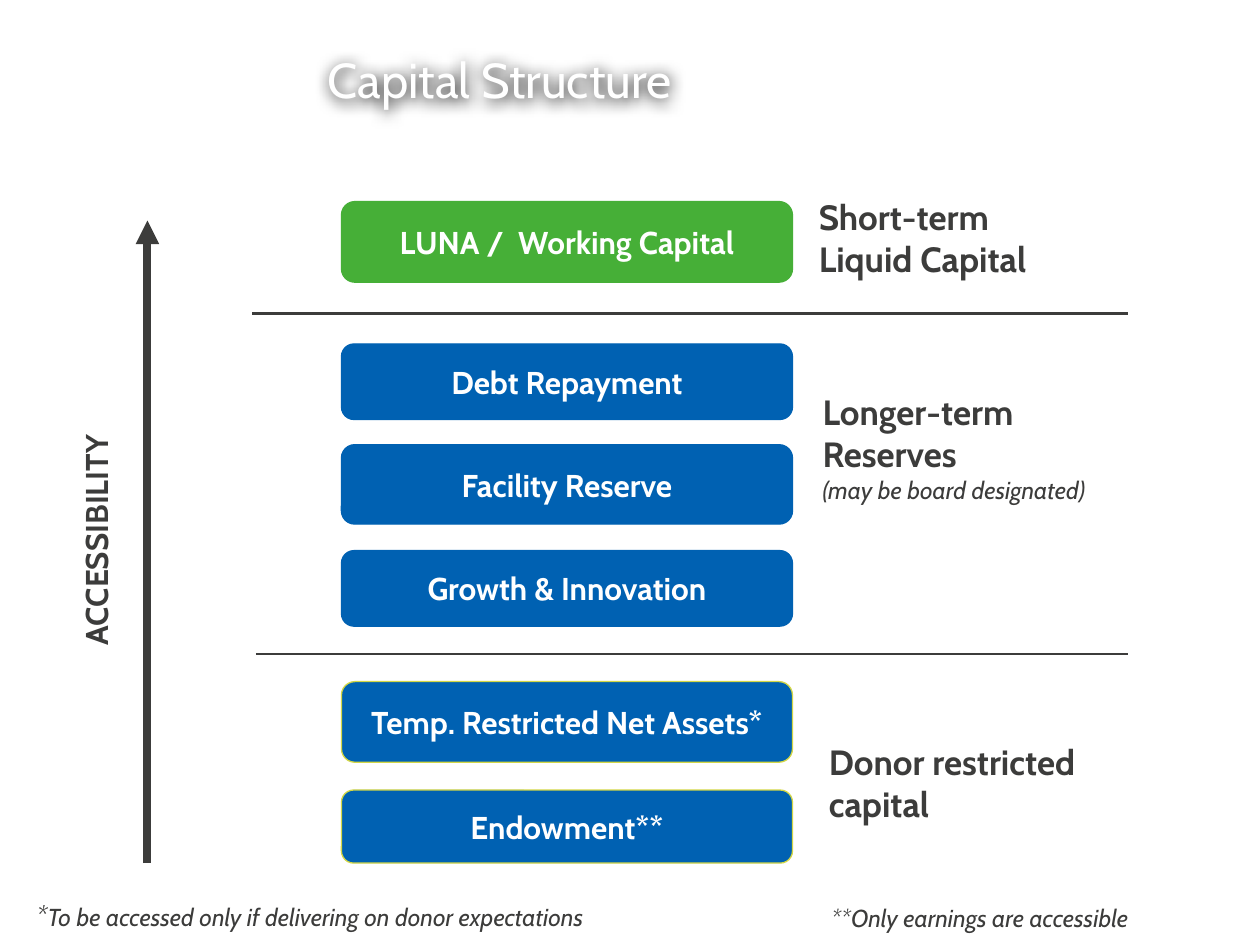
from lxml import etree
from pptx import Presentation
from pptx import util as u
from pptx.dml.color import RGBColor
from pptx.enum import shapes, text
from pptx.oxml.ns import qn

COLS, ROWS = 40, 30
FONT = "Cabin"
C = {"blue": "0061B2", "green": "46AF37", "lime": "D3D745",
     "ink": "3C3C3B", "white": "FFFFFF", "black": "000000"}

prs = Presentation()
prs.slide_width, prs.slide_height = u.Inches(10), u.Inches(7.5)


def col(n):
    return round(prs.slide_width * n / COLS)


def row(n):
    return round(prs.slide_height * n / ROWS)


def rgb(name):
    return RGBColor.from_string(C[name])


def place(box, x, y, w, h):
    return col(box[0] + x), row(box[1] + y), col(w), row(h)


def write(tf, lines, size=18, color="ink", bold=False, italic=False,
          align=text.PP_ALIGN.LEFT, anchor=text.MSO_ANCHOR.TOP, wrap=True):
    tf.word_wrap, tf.vertical_anchor = wrap, anchor
    for i, line in enumerate(lines):
        p = tf.paragraphs[0] if i == 0 else tf.add_paragraph()
        p.alignment = align
        for words, changes in line:
            r = p.add_run()
            r.text = words
            f = r.font
            f.name, f.color.rgb = FONT, rgb(color)
            f.size = u.Pt(changes.get("size", size))
            f.bold = changes.get("bold", bold)
            f.italic = changes.get("italic", italic)


def textbox(s, area, lines, **fmt):
    sp = s.shapes.add_textbox(*area)
    write(sp.text_frame, lines, **fmt)
    return sp


def rule(s, x1, y1, x2, y2, width):
    ln = s.shapes.add_connector(shapes.MSO_CONNECTOR.STRAIGHT,
                                col(x1), row(y1), col(x2), row(y2))
    ln.line.color.rgb, ln.line.width = rgb("ink"), u.Pt(width)
    etree.SubElement(ln._element.spPr, qn("a:effectLst"))
    return ln


def title(s, box):
    sp = textbox(s, place(box, 0, 0, *box[2:]), [[("Capital Structure", {})]],
                 size=28, color="white", anchor=text.MSO_ANCHOR.MIDDLE)
    effects = etree.SubElement(sp._element.spPr, qn("a:effectLst"))
    glow = etree.SubElement(effects, qn("a:outerShdw"), blurRad=str(u.Pt(8.5)),
                            dist=str(u.Pt(1)), dir="5400000", algn="tl", rotWithShape="0")
    etree.SubElement(glow, qn("a:srgbClr"), val=C["black"])


def capital_stack(s, box):
    bars = [("LUNA /  Working Capital", 0, 2.56, "green", "green"),
            ("Debt Repayment", 4.52, 2.4, "blue", "blue"),
            ("Facility Reserve", 7.72, 2.52, "blue", "blue"),
            ("Growth & Innovation", 11.08, 2.4, "blue", "blue"),
            ("Temp. Restricted Net Assets*", 15.24, 2.56, "blue", "lime"),
            ("Endowment**", 18.68, 2.32, "blue", "lime")]
    for name, y, h, fill, edge in bars:
        sp = s.shapes.add_shape(shapes.MSO_SHAPE.ROUNDED_RECTANGLE,
                                *place(box, 0, y, box[2], h))
        sp.shadow.inherit = False
        sp.fill.solid()
        sp.fill.fore_color.rgb = rgb(fill)
        sp.line.color.rgb, sp.line.width = rgb(edge), u.Pt(0.75)
        write(sp.text_frame, [[(name, {})]], color="white", bold=True,
              align=text.PP_ALIGN.CENTER, anchor=text.MSO_ANCHOR.MIDDLE)


def tier_labels(s, box):
    aside = {"size": 14, "bold": False, "italic": True}
    tiers = [(0, 0, 3.08, [("Short-term", {}), ("Liquid Capital", {})]),
             (0.12, 6.2, 4.04, [("Longer-term", {}), ("Reserves", {}),
                                ("(may be board designated)", aside)]),
             (0.32, 17.32, 3.08, [("Donor restricted", {}), ("capital", {})])]
    for x, y, h, lines in tiers:
        textbox(s, place(box, x, y, box[2], h), [[line] for line in lines],
                size=20, bold=True)


def dividers(s, box):
    x, y, w, h = box
    rule(s, x, y, x + w, y, 1.5)
    rule(s, x + 0.12, y + h, x + w, y + h, 1.5)


def access_axis(s, box):
    x, y, w, h = box
    arrow = rule(s, x + w, y + h, x + w, y, 4.5)
    etree.SubElement(arrow.line._get_or_add_ln(), qn("a:tailEnd"), type="triangle")
    sp = textbox(s, place(box, 0, 7.16, 2, 6.72), [[("ACCESSIBILITY", {})]],
                 bold=True, wrap=False)
    sp.text_frame._txBody.bodyPr.set("vert", "vert270")


def footnotes(s, box):
    textbox(s, place(box, 0, 0, 25.4, 1.48),
            [[("*", {"size": 16}),
              ("To be accessed only if delivering on donor expectations", {})]],
            size=14, italic=True)
    textbox(s, place(box, 25.24, 0.16, 14, 1.36),
            [[("**Only earnings are accessible", {})]], size=14, italic=True)


def main():
    s = prs.slides.add_slide(prs.slide_layouts[6])
    title(s, (10, 0.6, 28, 3.8))
    capital_stack(s, (10.84, 6.4, 14.32, 21))
    tier_labels(s, (25.6, 6, 10.24, 20.4))
    dividers(s, (8, 9.96, 27.8, 10.8))
    access_axis(s, (2.24, 7, 2.44, 20.4))
    footnotes(s, (0.76, 28.32, 39.24, 1.52))
    prs.save("out.pptx")


if __name__ == "__main__":
    main()
